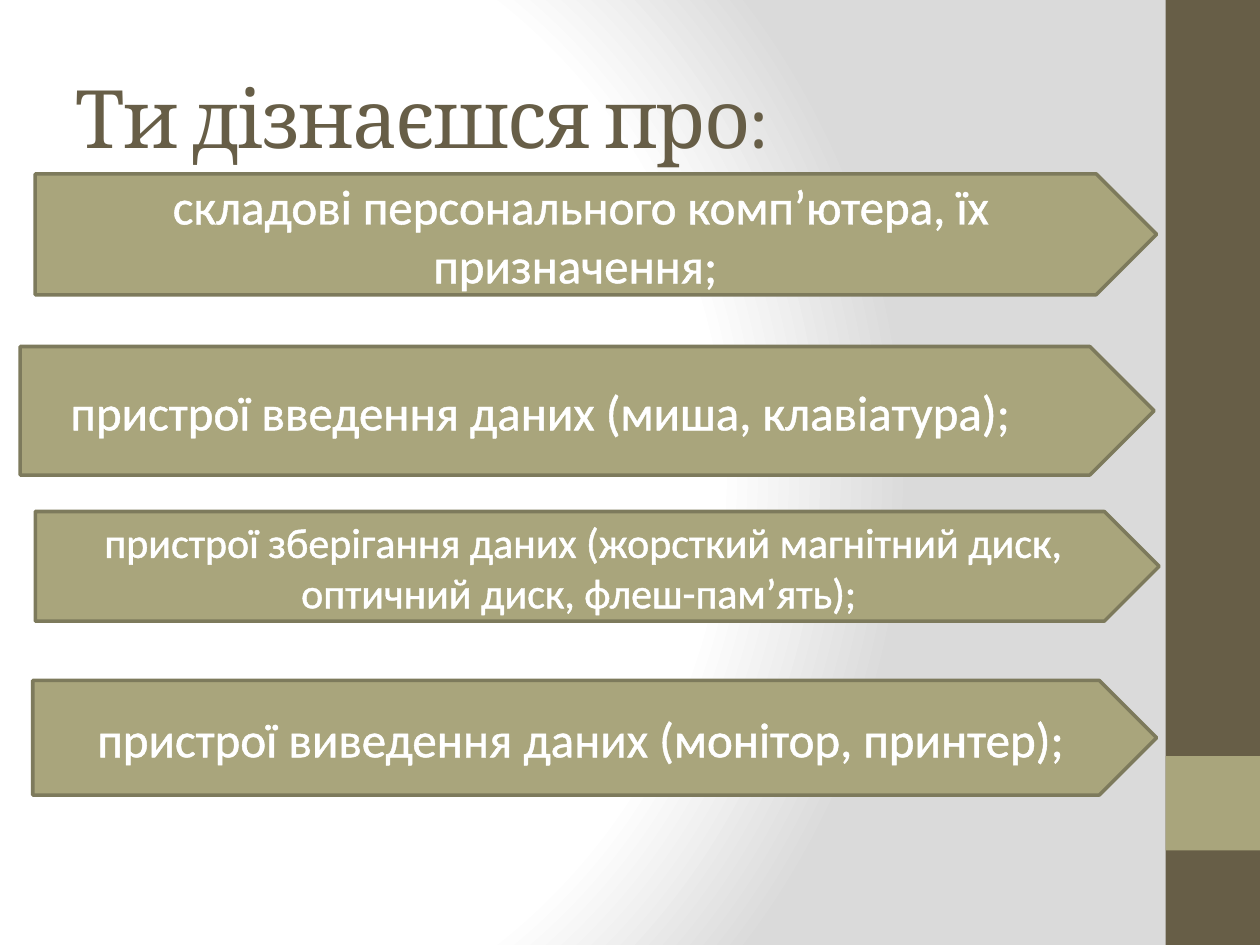
from dataclasses import dataclass

from lxml import etree
from pptx import Presentation
from pptx.dml.color import RGBColor
from pptx.enum.shapes import MSO_SHAPE
from pptx.enum.text import MSO_ANCHOR, MSO_AUTO_SIZE, PP_ALIGN
from pptx.oxml import parse_xml
from pptx.oxml.ns import nsdecls, qn
from pptx.util import Inches, Pt

RECTANGLE = MSO_SHAPE.RECTANGLE
PENTAGON = MSO_SHAPE.PENTAGON
MIDDLE = MSO_ANCHOR.MIDDLE
NO_AUTOFIT = MSO_AUTO_SIZE.NONE
LEFT, CENTER = PP_ALIGN.LEFT, PP_ALIGN.CENTER


@dataclass(frozen=True)
class Theme:
    """Colours, fonts and type sizes of the slide."""
    dark: str = "675E47"
    accent: str = "A9A57C"
    border: str = "7D7A5C"
    light: str = "FFFFFF"
    shade: str = "DADADA"
    heading_font: str = "Cambria"
    body_font: str = "Calibri"
    title_size: float = 46
    large: float = 28
    medium: float = 24
    text_outline: float = 1.45


THEME = Theme()
TITLE = "Ти дізнаєшся про:"
TITLE_BOX = (0.5, 0.3, 8.33, 1.25)
SIDEBAR_BOX = (9.25, 0, 0.75, 7.5)
INPUT_TOPIC = ("пристрої введення даних (миша, клавіатура);", (0.16, 2.75, 9, 1.02))
TOPICS = [
    ("складові персонального комп’ютера, їх призначення; ", (0.28, 1.38, 8.9, 0.96), THEME.large),
    ("пристрої зберігання даних (жорсткий магнітний диск, оптичний диск, флеш-пам’ять); ",
     (0.28, 4.06, 8.92, 0.87), THEME.medium),
    ("пристрої виведення даних (монітор, принтер);", (0.26, 5.4, 8.92, 0.91), THEME.large),
]


def color(value):
    """Turn a hex string into a colour."""
    return RGBColor.from_string(value)


def place(shape, box):
    """Move a shape into a box given in inches."""
    shape.left, shape.top, shape.width, shape.height = map(Inches, box)


def paint(shape, fill, line=None):
    """Fill a shape and draw or hide its border."""
    shape.fill.solid()
    shape.fill.fore_color.rgb = color(fill)
    if line:
        shape.line.color.rgb = color(line)
        shape.line.width = Pt(2)
    else:
        shape.line.fill.background()


def write(shape, text, font_name, size, text_color, alignment):
    """Set one formatted, vertically centred paragraph and return it."""
    frame = shape.text_frame
    frame.text = text
    frame.word_wrap = True
    frame.auto_size = NO_AUTOFIT
    frame.vertical_anchor = MIDDLE
    paragraph = frame.paragraphs[0]
    paragraph.alignment = alignment
    font = paragraph.runs[0].font
    font.name, font.size = font_name, Pt(size)
    font.color.rgb = color(text_color)
    return paragraph


def write_topic(shape, text, size, alignment):
    """Write outlined topic text on an arrow and return the paragraph."""
    paint(shape, THEME.accent, THEME.border)
    paragraph = write(shape, text, THEME.body_font, size, THEME.light, alignment)
    outline = parse_xml(
        f'<a:ln {nsdecls("a")} w="{Pt(THEME.text_outline)}"><a:solidFill>'
        f'<a:srgbClr val="{THEME.light}"/></a:solidFill></a:ln>')
    paragraph.runs[0].font._element.insert(0, outline)
    return paragraph


def add_background(slide):
    """Give the slide a radial gradient."""
    stops = "".join(
        f'<a:gs pos="{position * 1000}"><a:srgbClr val="{value}"/></a:gs>'
        for position, value in ((0, THEME.light), (75, THEME.light), (100, THEME.shade)))
    background = parse_xml(
        f'<p:bg {nsdecls("p", "a")}><p:bgPr><a:gradFill rotWithShape="1">'
        f'<a:gsLst>{stops}</a:gsLst><a:path path="circle">'
        '<a:fillToRect l="20000" t="50000" r="100000" b="50000"/></a:path>'
        '</a:gradFill><a:effectLst/></p:bgPr></p:bg>')
    slide._element.cSld.insert(0, background)


def add_sidebar(slide, box):
    """Draw the side strip with a square accent one square above its foot."""
    left, top, width, height = box
    accent_box = (left, top + height - 2 * width, width, width)
    for part, fill in ((box, THEME.dark), (accent_box, THEME.accent)):
        shape = slide.shapes.add_shape(RECTANGLE, *map(Inches, part))
        shape.shadow.inherit = False
        paint(shape, fill)


def fill_title(slide, box):
    """Place and format the title."""
    title = slide.shapes.title
    place(title, box)
    paragraph = write(title, TITLE, THEME.heading_font, THEME.title_size, THEME.dark, LEFT)
    paragraph.runs[0].font._element.set("spc", "-100")


def fill_body(slide, text, box):
    """Turn the body placeholder into an arrow with a bulleted topic."""
    body = slide.placeholders[1]
    place(body, box)
    body._element.spPr.append(parse_xml(
        f'<a:prstGeom {nsdecls("a")} prst="homePlate"><a:avLst/></a:prstGeom>'))
    properties = write_topic(body, text, THEME.large, LEFT)._p.get_or_add_pPr()
    properties.set("marL", str(Inches(0.3)))
    properties.set("indent", str(Inches(-0.3)))
    bullet_color = etree.SubElement(properties, qn("a:buClr"))
    etree.SubElement(bullet_color, qn("a:srgbClr"), val=THEME.accent)
    etree.SubElement(properties, qn("a:buChar"), char="•")


def add_topic(slide, text, box, size):
    """Add an arrow with a centred topic."""
    arrow = slide.shapes.add_shape(PENTAGON, *map(Inches, box))
    arrow.shadow.inherit = False
    write_topic(arrow, text, size, CENTER)


def main():
    """Build and save the presentation."""
    presentation = Presentation()
    presentation.slide_width, presentation.slide_height = Inches(10), Inches(7.5)
    slide = presentation.slides.add_slide(presentation.slide_layouts[1])
    add_background(slide)
    add_sidebar(slide, SIDEBAR_BOX)
    fill_title(slide, TITLE_BOX)
    fill_body(slide, *INPUT_TOPIC)
    for topic in TOPICS:
        add_topic(slide, *topic)
    presentation.save("out.pptx")


if __name__ == "__main__":
    main()
